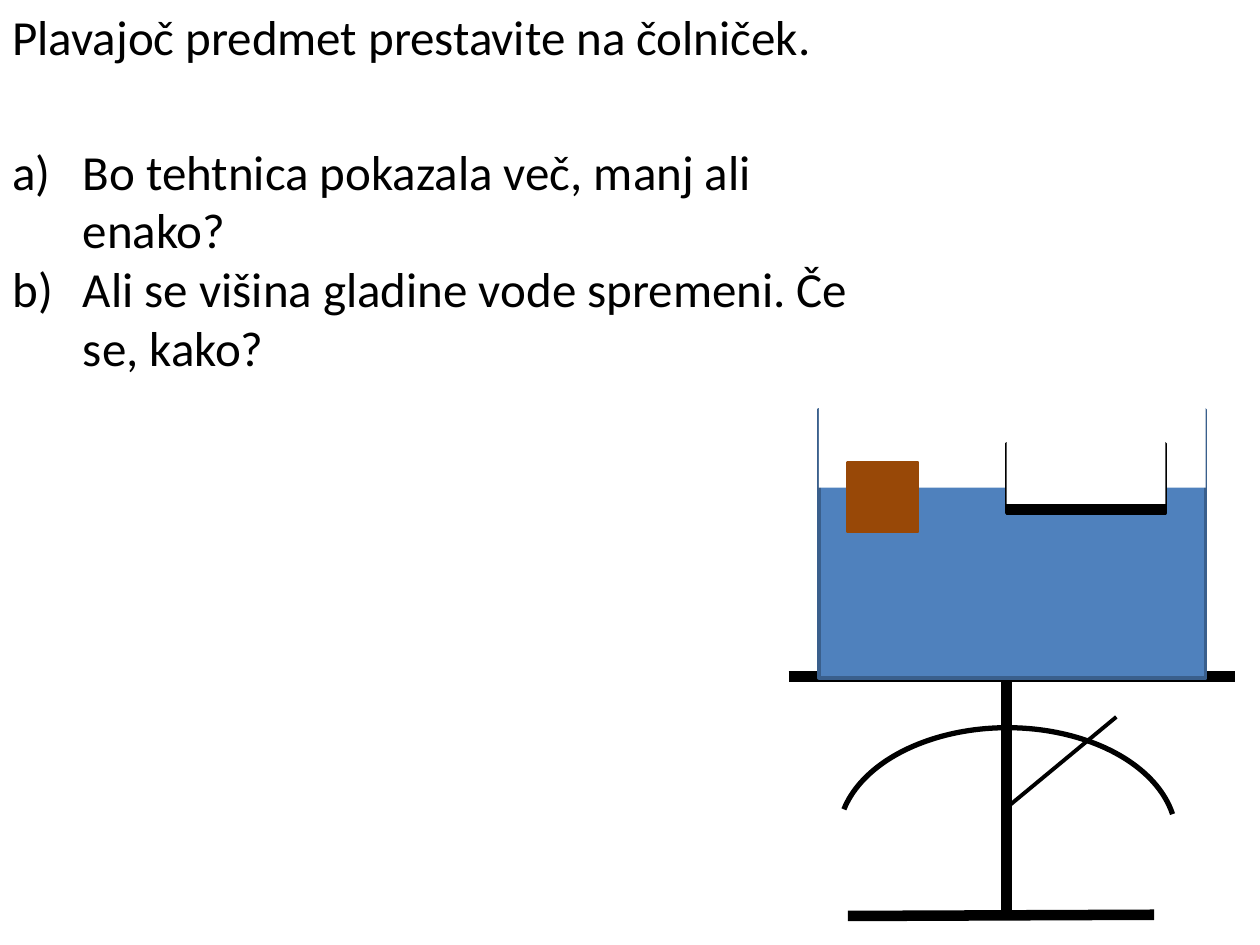
from lxml import etree
from pptx import Presentation
from pptx import util as u
from pptx.dml.color import RGBColor
from pptx.enum import shapes, text
from pptx.oxml import ns

BLACK = RGBColor(0x00, 0x00, 0x00)
WHITE = RGBColor(0xFF, 0xFF, 0xFF)
WATER = RGBColor(0x4F, 0x81, 0xBD)
GLASS = RGBColor(0x3A, 0x5F, 0x8C)
WOOD = RGBColor(0x98, 0x48, 0x07)

INSTRUCTION = "Plavajoč predmet prestavite na čolniček."
QUESTIONS = [
    "Bo tehtnica pokazala več, manj ali enako?",
    "Ali se višina gladine vode spremeni. Če se, kako?",
]
QUESTION_FONT = {"name": "Calibri", "size": u.Pt(28)}
POST_X = 7.99
PLATE_Y = 5.37


def inches(*lengths):
    return [u.Inches(length) for length in lengths]


def set_all(target, values):
    for name, value in values.items():
        setattr(target, name, value)


def add_bar(parent, start, end, width):
    bar = parent.shapes.add_connector(
        shapes.MSO_CONNECTOR.STRAIGHT, *inches(*start, *end))
    bar.line.color.rgb = BLACK
    bar.line.width = u.Pt(width)
    etree.SubElement(bar._element.spPr, ns.qn("a:effectLst"))


def add_block(parent, box, fill, outline=None):
    block = parent.shapes.add_shape(shapes.MSO_SHAPE.RECTANGLE, *inches(*box))
    block.shadow.inherit = False
    block.fill.solid()
    block.fill.fore_color.rgb = fill
    if outline is None:
        block.line.fill.background()
    else:
        block.line.color.rgb = outline
        block.line.width = u.Pt(2)


def add_dial(parent, box):
    dial = parent.shapes.add_shape(shapes.MSO_SHAPE.ARC, *inches(*box))
    dial.shadow.inherit = False
    dial.rotation = 270
    dial.adjustments[0] = 167.7
    dial.adjustments[1] = 49.34
    dial.fill.background()
    dial.line.color.rgb = BLACK
    dial.line.width = u.Pt(3)


def add_scale(slide):
    scale = slide.shapes.add_group_shape()
    add_bar(scale, (6.26, PLATE_Y), (9.8, PLATE_Y), 6)
    add_bar(scale, (POST_X, PLATE_Y), (POST_X, 7.26), 6)
    add_bar(scale, (6.73, 7.27), (9.16, 7.26), 6)
    add_dial(scale, (7.13, 5.3, 1.73, 2.68))
    add_bar(scale, (POST_X, 6.41), (8.86, 5.69), 2.25)


def add_vessel(slide, body, opening, fill, outline):
    vessel = slide.shapes.add_group_shape()
    add_block(vessel, body, fill, outline)
    add_block(vessel, opening, WHITE)


def add_lettering(paragraph):
    properties = paragraph._p.get_or_add_pPr()
    indent = u.Inches(0.56)
    properties.set("marL", str(indent))
    properties.set("indent", str(-indent))
    etree.SubElement(properties, ns.qn("a:buFont"), typeface="+mj-lt")
    etree.SubElement(properties, ns.qn("a:buAutoNum"), type="alphaLcParenR")


def add_wording(slide, box, lines, wrap, lettered=False):
    frame = slide.shapes.add_textbox(*inches(*box)).text_frame
    frame.text = "\n".join(lines)
    set_all(frame, {"word_wrap": wrap,
                    "auto_size": text.MSO_AUTO_SIZE.SHAPE_TO_FIT_TEXT})
    for paragraph in frame.paragraphs:
        font = paragraph.runs[0].font
        set_all(font, QUESTION_FONT)
        font.color.rgb = BLACK
        if lettered:
            add_lettering(paragraph)


def main():
    deck = Presentation()
    set_all(deck, {"slide_width": u.Inches(10), "slide_height": u.Inches(7.5)})
    slide = deck.slides.add_slide(deck.slide_layouts[6])
    add_scale(slide)
    add_vessel(slide, (6.5, 3.25, 3.07, 2.13), (6.5, 2.93, 3.07, 0.94),
               WATER, GLASS)
    add_block(slide, (6.73, 3.67, 0.55, 0.55), WOOD, WOOD)
    add_vessel(slide, (POST_X, 3.52, 1.26, 0.55), (POST_X, 3.44, 1.26, 0.56),
               BLACK, BLACK)
    add_wording(slide, (0, 0, 6.7, 0.57), [INSTRUCTION], wrap=False)
    add_wording(slide, (0, 1.07, 7.05, 1.99), QUESTIONS, wrap=True,
                lettered=True)
    deck.save("out.pptx")


if __name__ == "__main__":
    main()
